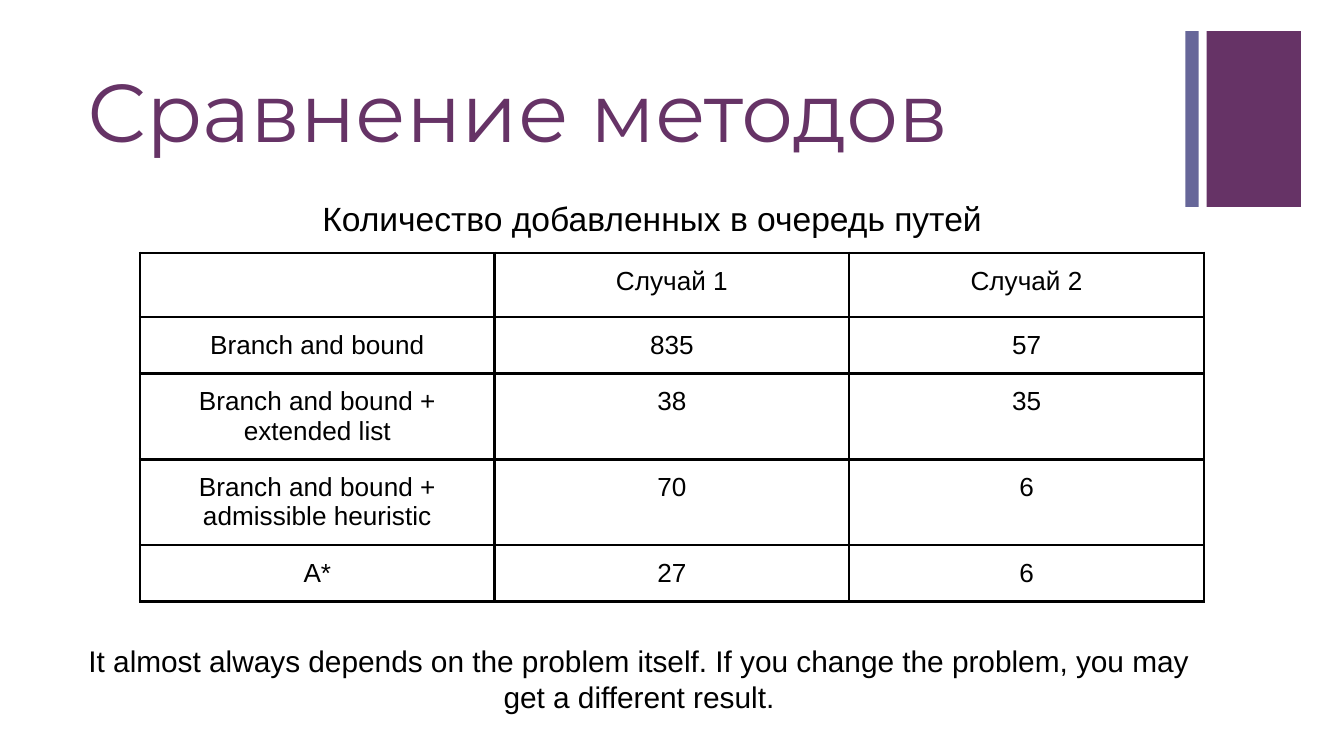
"""Build a slide that compares search methods by queued paths."""
from lxml.etree import SubElement
from pptx import Presentation
from pptx.dml.color import RGBColor
from pptx.enum.shapes import MSO_SHAPE
from pptx.enum.text import MSO_ANCHOR, MSO_AUTO_SIZE, PP_ALIGN
from pptx.oxml.ns import qn
from pptx.util import Pt

PLUM = RGBColor(0x66, 0x33, 0x66)
SLATE = RGBColor(0x66, 0x66, 0x99)
BLACK = RGBColor(0, 0, 0)

TITLE = "Сравнение методов"
HEAD = "Количество добавленных в очередь путей"
NOTE = ("It almost always depends on the problem itself. "
        "If you change the problem, you may get a different result.")
ROWS = [
    (34.3, ("", "Случай 1", "Случай 2")),
    (30.4, ("Branch and bound", "835", "57")),
    (45.8, ("Branch and bound + extended list", "38", "35")),
    (45.8, ("Branch and bound + admissible heuristic", "70", "6")),
    (30.4, ("A*", "27", "6")),
]
BARS = [(646.5, 50.5, PLUM), (635, 7.2, SLATE)]
TEXTS = [
    (HEAD, (165.6, 98.6, 388, 37.4), 18, PP_ALIGN.LEFT),
    (NOTE, (39.6, 337, 605.5, 36), 16, PP_ALIGN.CENTER),
]
COL = 190
PAD = 7.2
INSETS = {f"margin_{side}": Pt(PAD) for side in ("left", "top", "right", "bottom")}


def apply(item, values):
    """Set each named attribute."""
    for name, value in values.items():
        setattr(item, name, value)


def write(frame, text, size, align, face="Arial", color=BLACK):
    """Put one styled paragraph in a text frame."""
    frame.text = text
    par = frame.paragraphs[0]
    par.alignment = align
    apply(par.font, {"size": Pt(size), "name": face})
    par.font.color.rgb = color
    return par


def edge(cell):
    """Draw black lines round a cell."""
    props = cell._tc.get_or_add_tcPr()
    for place, side in enumerate(("lnL", "lnR", "lnT", "lnB")):
        line = props.makeelement(qn(f"a:{side}"), {"w": str(Pt(1.5))})
        props.insert(place, line)
        fill = SubElement(line, qn("a:solidFill"))
        SubElement(fill, qn("a:srgbClr"), val=str(BLACK))


def main():
    """Lay out and save the slide."""
    deck = Presentation()
    apply(deck, {"slide_width": Pt(720), "slide_height": Pt(405)})
    slide = deck.slides.add_slide(deck.slide_layouts[5])
    shapes = slide.shapes

    for left, width, color in BARS:
        bar = shapes.add_shape(MSO_SHAPE.RECTANGLE, Pt(left), Pt(16.6), Pt(width), Pt(94.3))
        bar.shadow.inherit = False
        bar.fill.solid()
        bar.fill.fore_color.rgb = color
        bar.line.fill.background()

    title = shapes.title
    apply(title, {"left": Pt(39.6), "top": Pt(28.8), "width": Pt(594.7), "height": Pt(66.2)})
    frame = title.text_frame
    apply(frame, {**INSETS, "word_wrap": True, "auto_size": MSO_AUTO_SIZE.NONE,
                  "vertical_anchor": MSO_ANCHOR.MIDDLE})
    par = write(frame, TITLE, 44, PP_ALIGN.LEFT, "Montserrat", PLUM)
    par.line_spacing = 0.9

    high = sum(height for height, _ in ROWS)
    table = shapes.add_table(len(ROWS), 3, Pt(75), Pt(135.5), Pt(3 * COL), Pt(high)).table
    apply(table, {"first_row": False, "horz_banding": False})
    for col in table.columns:
        col.width = Pt(COL)
    for row, (height, words) in zip(table.rows, ROWS):
        row.height = Pt(height)
        for cell, word in zip(row.cells, words):
            apply(cell, INSETS)
            cell.fill.background()
            write(cell.text_frame, word, 14, PP_ALIGN.CENTER)
            edge(cell)

    for text, place, size, align in TEXTS:
        frame = shapes.add_textbox(*map(Pt, place)).text_frame
        apply(frame, {**INSETS, "word_wrap": True})
        write(frame, text, size, align)

    deck.save("out.pptx")


if __name__ == "__main__":
    main()
